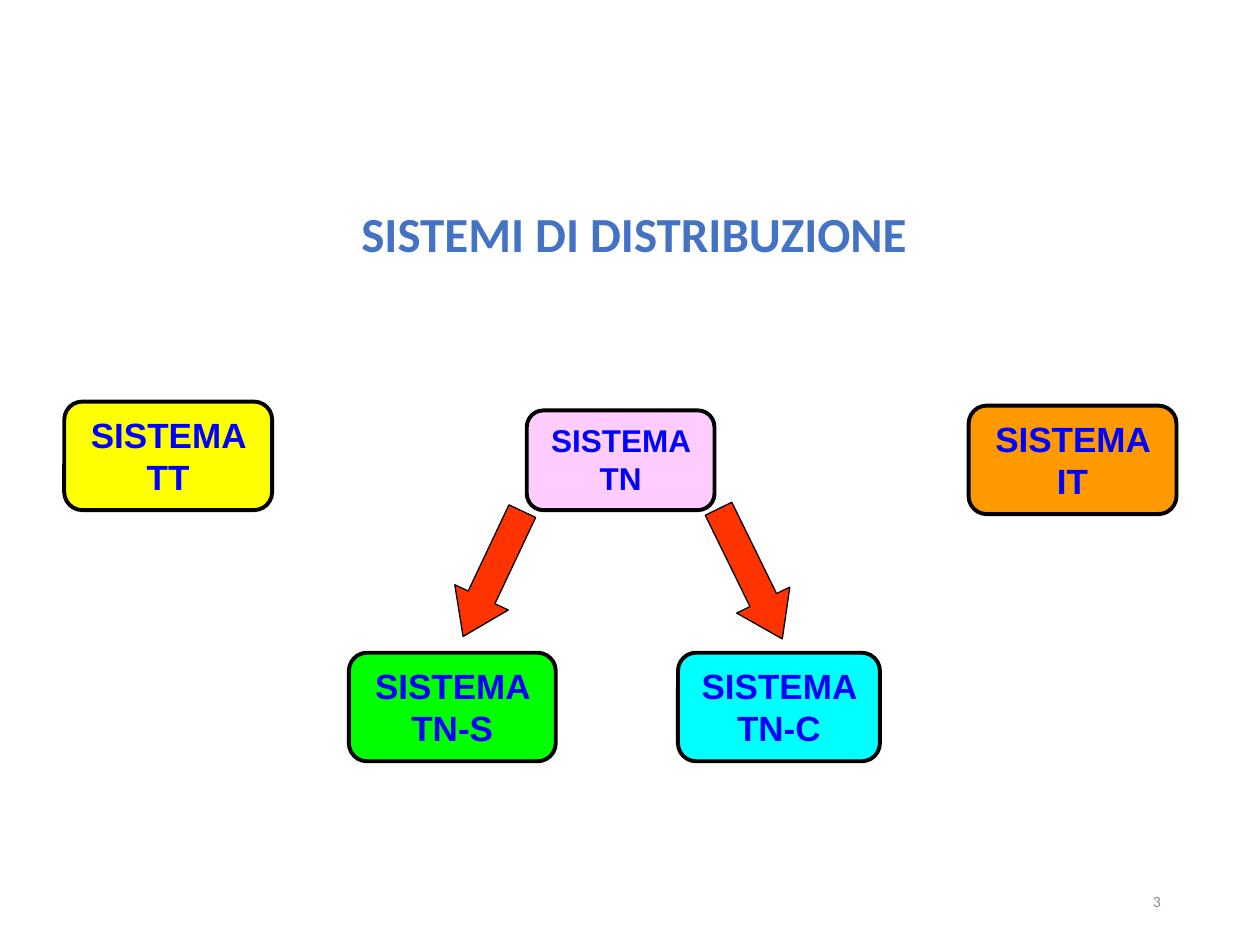
from dataclasses import dataclass

from pptx import Presentation
from pptx.dml.color import RGBColor
from pptx.enum import shapes, text
from pptx.util import Pt


@dataclass(frozen=True)
class Theme:
    heading_font: str = "Calibri"
    box_font: str = "Arial"
    heading: str = "4472C4"
    label: str = "0000FF"
    outline: str = "000000"
    arrow: str = "FF3300"
    page: str = "8C8C8C"
    heading_size: float = 28
    label_size: float = 20
    small_label_size: float = 18
    page_size: float = 9
    box_line: float = 2.25
    arrow_line: float = 0.75


THEME = Theme()


def write(shape, wording, *, font, size, color, bold=False, align=text.PP_ALIGN.LEFT,
          anchor=text.MSO_ANCHOR.TOP, wrap=True, grow=True):
    frame = shape.text_frame
    frame.word_wrap = wrap
    frame.vertical_anchor = anchor
    frame.auto_size = (text.MSO_AUTO_SIZE.SHAPE_TO_FIT_TEXT if grow
                       else text.MSO_AUTO_SIZE.NONE)
    paragraph = frame.paragraphs[0]
    paragraph.alignment = align
    run = paragraph.add_run()
    run.text = wording
    run.font.name = font
    run.font.size = Pt(size)
    run.font.bold = bold
    run.font.color.rgb = RGBColor.from_string(color)


def add_outlined(slide, kind, box, fill, line_width):
    shape = slide.shapes.add_shape(kind, *map(Pt, box))
    shape.shadow.inherit = False
    shape.fill.solid()
    shape.fill.fore_color.rgb = RGBColor.from_string(fill)
    shape.line.color.rgb = RGBColor.from_string(THEME.outline)
    shape.line.width = Pt(line_width)
    return shape


def add_heading(slide, box):
    heading = slide.shapes.add_textbox(*map(Pt, box))
    write(heading, "SISTEMI DI DISTRIBUZIONE", font=THEME.heading_font,
          size=THEME.heading_size, color=THEME.heading, bold=True, wrap=False)


def add_arrow(slide, box, rotation):
    arrow = add_outlined(slide, shapes.MSO_SHAPE.RIGHT_ARROW, box,
                         THEME.arrow, THEME.arrow_line)
    arrow.adjustments[0] = 0.5
    arrow.adjustments[1] = 0.73
    arrow.rotation = rotation


def add_system(slide, box, name, fill, size=THEME.label_size):
    system = add_outlined(slide, shapes.MSO_SHAPE.ROUNDED_RECTANGLE, box,
                          fill, THEME.box_line)
    write(system, f"SISTEMA {name}", font=THEME.box_font, size=size,
          color=THEME.label, bold=True, align=text.PP_ALIGN.CENTER)


def add_page_number(slide, box):
    number = slide.shapes.add_textbox(*map(Pt, box))
    write(number, "3", font=THEME.heading_font, size=THEME.page_size,
          color=THEME.page, align=text.PP_ALIGN.RIGHT,
          anchor=text.MSO_ANCHOR.MIDDLE, grow=False)


def main():
    deck = Presentation()
    deck.slide_width, deck.slide_height = Pt(720), Pt(540)
    slide = deck.slides.add_slide(deck.slide_layouts[6])

    add_heading(slide, (199.4, 113, 329.8, 41))
    add_arrow(slide, (387.4, 311, 82.8, 33.8), 63.9)
    add_arrow(slide, (241.9, 311, 79.2, 33.8), 115.3)

    add_system(slide, (36.7, 229.5, 118.8, 62), "TT", "FFFF00")
    add_system(slide, (301, 234.5, 107.3, 57), "TN", "FFCCFF",
               size=THEME.small_label_size)
    add_system(slide, (553.5, 231.8, 118.8, 62), "IT", "FF9900")
    add_system(slide, (199.4, 373, 118.2, 62), "TN-S", "00FF00")
    add_system(slide, (387.4, 373, 115.4, 62), "TN-C", "00FFFF")

    add_page_number(slide, (508.5, 500.5, 162, 28.8))
    deck.save("out.pptx")


if __name__ == "__main__":
    main()
